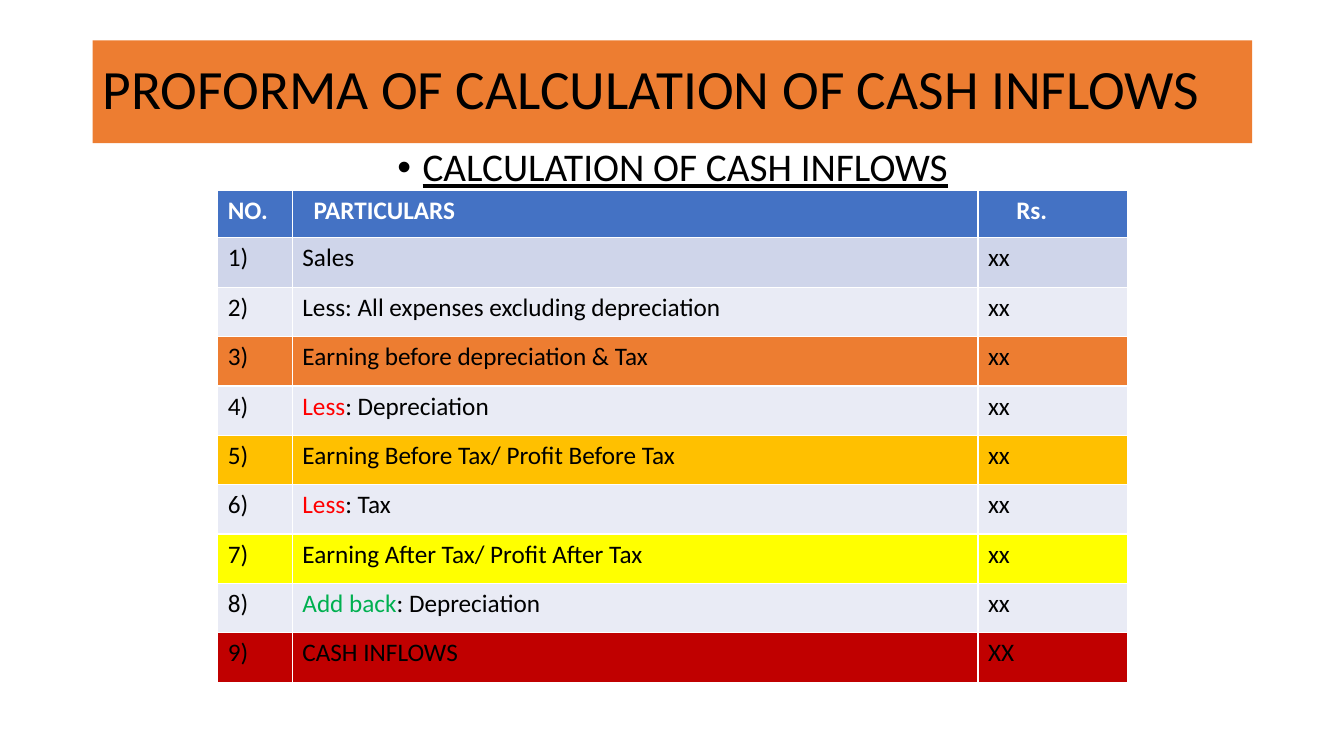
from lxml.etree import SubElement
from pptx import Presentation
from pptx.dml.color import RGBColor
from pptx.enum.shapes import MSO_SHAPE
from pptx.enum.text import MSO_ANCHOR, PP_ALIGN
from pptx.oxml import parse_xml
from pptx.oxml.ns import qn
from pptx.util import Inches, Pt

DRAWING = "http://schemas.openxmlformats.org/drawingml/2006/main"
BLACK, WHITE, RED, GREEN = "000000", "FFFFFF", "FF0000", "00B050"
ORANGE, BLUE, PALE = "ED7D31", "4472C4", "E9EBF5"


def color(hex_string):
    return RGBColor.from_string(hex_string)


def add_run(paragraph, text, size, text_color=BLACK, bold=False):
    run = paragraph.add_run()
    run.text = text
    run.font.size = Pt(size)
    run.font.bold = bold
    run.font.color.rgb = color(text_color)
    run.font.name = "Calibri"
    return run


presentation = Presentation()
presentation.slide_width = Inches(13.33)
presentation.slide_height = Inches(7.5)
slide = presentation.slides.add_slide(presentation.slide_layouts[6])

# Title band
left, width = Inches(0.92), Inches(11.5)
title = slide.shapes.add_shape(MSO_SHAPE.RECTANGLE, left, Inches(0.4), width, Inches(1.02))
title.shadow.inherit = False
title.fill.solid()
title.fill.fore_color.rgb = color(ORANGE)
title.line.fill.background()
title.text_frame.vertical_anchor = MSO_ANCHOR.MIDDLE
paragraph = title.text_frame.paragraphs[0]
paragraph.alignment = PP_ALIGN.LEFT
paragraph.line_spacing = 0.9
add_run(paragraph, "PROFORMA OF CALCULATION OF CASH INFLOWS", 39.6)

# Bulleted subtitle with a soft text shadow
subtitle = slide.shapes.add_textbox(left, Inches(1.42), width, Inches(0.47))
subtitle.text_frame.word_wrap = True
paragraph = subtitle.text_frame.paragraphs[0]
paragraph.alignment = PP_ALIGN.CENTER
paragraph.line_spacing = 0.9
properties = paragraph._p.get_or_add_pPr()
properties.set("marL", str(Inches(0.25)))
properties.set("indent", str(Inches(-0.25)))
SubElement(properties, qn("a:buFont")).set("typeface", "Arial")
SubElement(properties, qn("a:buChar")).set("char", "•")
run = add_run(paragraph, "CALCULATION OF CASH INFLOWS", 28)
run.font.underline = True
run._r.rPr.find(qn("a:solidFill")).addnext(parse_xml(
    f'<a:effectLst xmlns:a="{DRAWING}">'
    '<a:outerShdw blurRad="38100" dist="38100" dir="2700000" algn="tl">'
    '<a:srgbClr val="000000"><a:alpha val="43000"/></a:srgbClr>'
    '</a:outerShdw></a:effectLst>'))

# Table content: row fill, coloured lead word, its colour, rest of the text, amount
items = [
    ("CFD5EA", "", BLACK, "Sales", "xx"),
    (PALE, "", BLACK, "Less: All expenses excluding depreciation", "xx"),
    (ORANGE, "", BLACK, "Earning before depreciation & Tax", "xx"),
    (PALE, "Less", RED, ": Depreciation", "xx"),
    ("FFC000", "", BLACK, "Earning Before Tax/ Profit Before Tax", "xx"),
    (PALE, "Less", RED, ": Tax", "xx"),
    ("FFFF00", "", BLACK, "Earning After Tax/ Profit After Tax", "xx"),
    (PALE, "Add back", GREEN, ": Depreciation", "xx"),
    ("C00000", "", BLACK, "CASH INFLOWS", "XX"),
]
column_widths = [0.74, 6.8, 1.48]
header_height, row_height = 0.47, 0.49
table = slide.shapes.add_table(
    len(items) + 1, len(column_widths), Inches(2.16), Inches(1.89),
    Inches(sum(column_widths)), Inches(header_height + row_height * len(items))).table
for column, column_width in zip(table.columns, column_widths):
    column.width = Inches(column_width)
for row in table.rows:
    row.height = Inches(row_height)
table.rows[0].height = Inches(header_height)

# Header row, with its captions indented by cell margin
headings = [("NO.", 0.1), ("PARTICULARS", 0.21), ("Rs.", 0.38)]
for cell, (heading, margin) in zip(table.rows[0].cells, headings):
    cell.fill.solid()
    cell.fill.fore_color.rgb = color(BLUE)
    cell.margin_left = Inches(margin)
    add_run(cell.text_frame.paragraphs[0], heading, 18, WHITE, bold=True)

# Numbered rows
for number, (row_fill, lead, lead_color, text, amount) in enumerate(items, start=1):
    cell_runs = [
        [(f"{number})", BLACK)],
        [(lead, lead_color), (text, BLACK)],
        [(amount, BLACK)],
    ]
    for cell, runs in zip(table.rows[number].cells, cell_runs):
        cell.fill.solid()
        cell.fill.fore_color.rgb = color(row_fill)
        for run_text, run_color in runs:
            if run_text:
                add_run(cell.text_frame.paragraphs[0], run_text, 18, run_color)

presentation.save("out.pptx")
